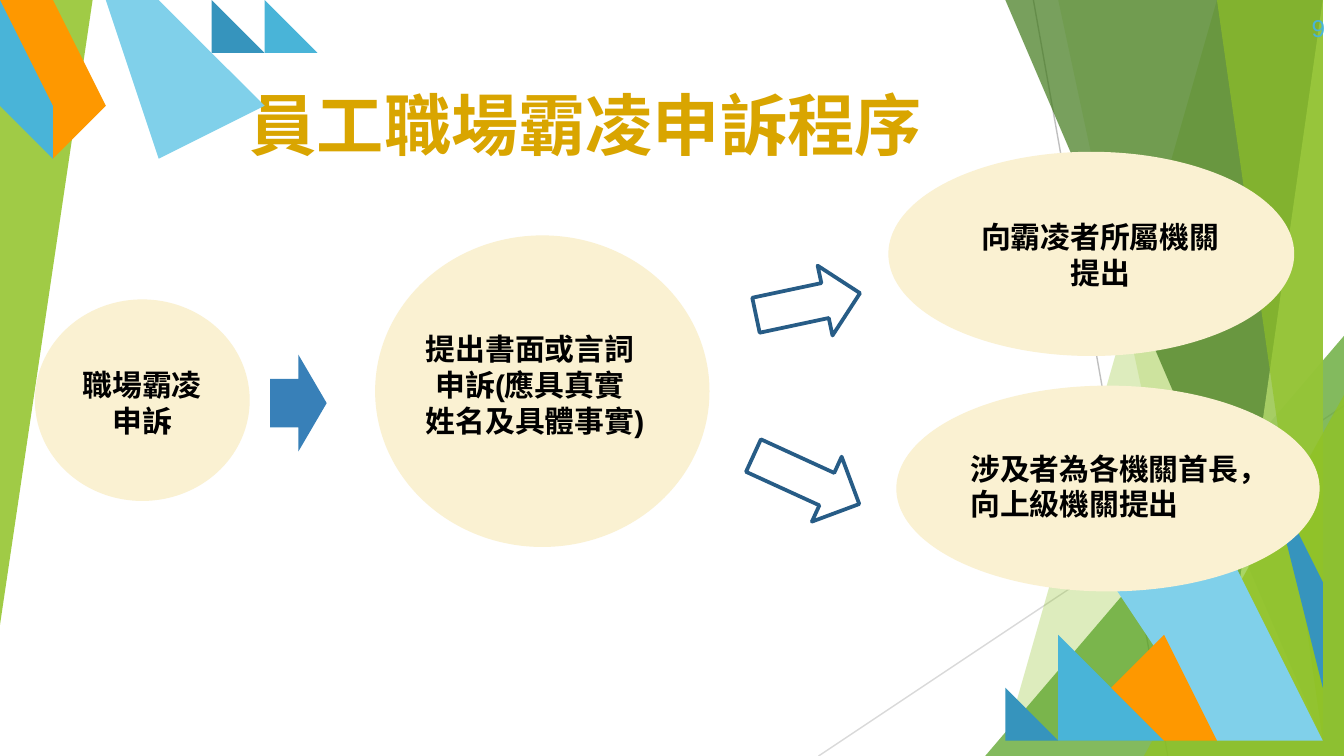
import pptx
import pptx.util
import pptx.dml.color
import pptx.enum.shapes
import pptx.enum.text
import pptx.oxml
import pptx.oxml.ns

Cm, Pt = pptx.util.Cm, pptx.util.Pt
KIND = pptx.enum.shapes.MSO_SHAPE
ALIGN = pptx.enum.text.PP_ALIGN

WIDE, HIGH = 25.4, 14.29
THEME = {
    "sky": "49B4D8", "pale": "80D0EA", "blue": "3694BD", "orange": "FE9800",
    "lime": "90C226", "leaf": "54A021", "moss": "3F7819", "mint": "C0E474",
    "cream": "FAF1D2", "gold": "D9A500", "black": "000000",
    "arrow": "3880B8", "edge": "275C86", "gray": "BFBFBF", "mist": "D9D9D9",
    "latin": "Arial", "head": "Noto Sans CJK SC", "body": "Noto Sans CJK TC",
    "title": 36, "label": 16, "number": 13,
}

# Content: all lengths in centimetres
TITLE = ("員工職場霸凌申訴程序", (2.79, 1.57, 16.56, 1.55))
NUMBER = ("9", (24.79, 0.25, 0.61, 0.56))
LINES = [(19.53, 0, 22.07, HIGH, "gray"), (WIDE, 7.67, 15.47, HIGH, "mist")]
# Facets reach the right edge: top left x, bottom left x, colour, opacity.
# Triangles: box, turn, colour, opacity.
BACK = [
    ("facet", (23.39, 19.13), "lime", 30),
    ("facet", (20.02, 22.53), "lime", 20),
    ("tri", (18.62, 6.35, 6.78, 7.94, 0), "leaf", 72),
    ("facet", (19.46, 24.59), "moss", 70),
    ("facet", (24.84, 22.71), "mint", 70),
    ("facet", (22.78, 25.1), "lime", 65),
    ("tri", (21.62, 7.47, 3.78, 6.82, 0), "lime", 80),
    ("tri", (0, 0, 1.75, 11.81, 180), "lime", 85),
]
STRIPES = [
    ("sky", [(20.45, HIGH), (21.64, HIGH), (20.45, 11.94), (19.51, 12.42)]),
    ("pale", [(23.19, HIGH), (25.35, HIGH), (23.22, 10.03), (21.49, 10.9)]),
    ("orange", [(22.1, HIGH), (23.09, HIGH), (22.1, 12.32), (21.29, 12.73)]),
    ("blue", [(19.3, HIGH), (19.89, HIGH), (19.33, 13.18), (18.87, 13.41)]),
    ("blue", [(24.49, 8.84), (23.52, 9.3), (WIDE, 13.08), (WIDE, 10.69)]),
    ("blue", [(4.14, 0), (3.51, 0), (4.14, 1.27), (4.65, 1.02)]),
    ("orange", [(1.4, 0), (0.05, 0), (1.4, 2.67), (2.49, 2.11)]),
    ("pale", [(3.33, 0), (1.78, 0), (3.33, 3.1), (4.57, 2.49)]),
    ("sky", [(5.44, 0), (4.72, 0), (5.44, 1.4), (6.02, 1.12)]),
    ("sky", [(0.53, 2.54), (1.07, 2.29), (0, 0.15), (0, 1.5)]),
]
# Steps: oval box, text box, alignment, lines with first-line indent
STEPS = [
    ((0.66, 5.66, 4.06, 3.81), (1.47, 6.93, 2.44, 1.37), ALIGN.CENTER,
     [("職場霸凌", 0), ("申訴", 0)]),
    ((7.09, 4.45, 6.32, 5.89), (8.05, 6.25, 4.17, 2.06), ALIGN.LEFT,
     [("提出書面或言詞", 0), ("申訴(應具真實", 0.18), ("姓名及具體事實)", 0)]),
    ((16.79, 2.87, 7.67, 3.86), (18.52, 4.14, 4.55, 1.37), ALIGN.CENTER,
     [("向霸凌者所屬機關", 0), ("提出", 0)]),
    ((16.94, 7.29, 8, 3.89), (18.34, 8.51, 5.84, 1.37), ALIGN.LEFT,
     [("涉及者為各機關首長，", 0), ("向上級機關提出", 0)]),
]
# Arrows: centre x, centre y, length, width, turn, fill, line
ARROWS = [
    (5.64, 7.62, 1.07, 1.83, 0, "arrow", None),
    (15.27, 5.75, 2.01, 1.35, -12, None, "edge"),
    (15.24, 9.07, 2.2, 1.35, 24.6, None, "edge"),
]


def tint(name):
    return pptx.dml.color.RGBColor.from_string(THEME[name])


def paint(shape, fill=None, line=None, clear=100):
    shape.shadow.inherit = False
    if fill:
        shape.fill.solid()
        shape.fill.fore_color.rgb = tint(fill)
        if clear < 100:
            color = shape.fill._xPr.find(".//" + pptx.oxml.ns.qn("a:srgbClr"))
            pptx.oxml.ns  # namespace helpers
            alpha = color.makeelement(pptx.oxml.ns.qn("a:alpha"), {"val": str(clear * 1000)})
            color.append(alpha)
    else:
        shape.fill.background()
    if line:
        shape.line.color.rgb = tint(line)
        shape.line.width = Pt(2)
    else:
        shape.line.fill.background()


def preset(kind, x, y, w, h, turn=0):
    shape = slide.shapes.add_shape(kind, Cm(x), Cm(y), Cm(w), Cm(h))
    shape.rotation = turn
    return shape


def outline(points):
    pen = slide.shapes.build_freeform(*points[0], scale=Cm(1))
    pen.add_line_segments(points[1:], close=True)
    return pen.convert_to_shape()


def write(shape, lines, size, color, latin, asian, bold, align):
    frame = shape.text_frame
    frame.word_wrap = True
    frame.auto_size = pptx.enum.text.MSO_AUTO_SIZE.NONE
    frame.vertical_anchor = pptx.enum.text.MSO_ANCHOR.TOP
    frame.margin_left = frame.margin_right = 0
    frame.margin_top = frame.margin_bottom = 0
    for i, (text, indent) in enumerate(lines):
        para = frame.add_paragraph() if i else frame.paragraphs[0]
        para.text = text
        para.alignment = align
        if indent:
            para._p.get_or_add_pPr().set("indent", str(Cm(indent)))
        font = para.font
        font.size, font.bold, font.name = Pt(THEME[size]), bold, THEME[latin]
        font.color.rgb = tint(color)
        props = font._rPr
        east = props.makeelement(pptx.oxml.ns.qn("a:ea"), {"typeface": THEME[asian]})
        props.find(pptx.oxml.ns.qn("a:latin")).addnext(east)


def textbox(box, *style):
    write(slide.shapes.add_textbox(*map(Cm, box)), *style)


deck = pptx.Presentation()
deck.slide_width, deck.slide_height = Cm(WIDE), Cm(HIGH)
slide = deck.slides.add_slide(deck.slide_layouts[5])

# Backdrop
for x1, y1, x2, y2, color in LINES:
    line = slide.shapes.add_connector(
        pptx.enum.shapes.MSO_CONNECTOR.STRAIGHT, Cm(x1), Cm(y1), Cm(x2), Cm(y2))
    line.line.color.rgb = tint(color)
    line.line.width = Pt(0.75)
    props = line._element.spPr
    props.append(props.makeelement(pptx.oxml.ns.qn("a:effectLst"), {}))
for kind, place, color, clear in BACK:
    if kind == "facet":
        top, low = place
        shape = outline([(top, 0), (WIDE, 0), (WIDE, HIGH), (low, HIGH)])
    else:
        shape = preset(KIND.ISOSCELES_TRIANGLE, *place)
        shape.adjustments[0] = 1
    paint(shape, color, clear=clear)
for color, points in STRIPES:
    paint(outline(points), color)

# Title and slide number
title = slide.shapes.title
title.left, title.top, title.width, title.height = map(Cm, TITLE[1])
write(title, [(TITLE[0], 0)], "title", "gold", "head", "head", True, ALIGN.CENTER)
textbox(NUMBER[1], [(NUMBER[0], 0)], "number", "sky", "latin", "latin", False, ALIGN.LEFT)

# Steps
for oval, box, align, lines in STEPS:
    paint(preset(KIND.OVAL, *oval), "cream")
    textbox(box, lines, "label", "black", "latin", "body", True, align)

# Arrows
for x, y, w, h, turn, fill, line in ARROWS:
    paint(preset(KIND.RIGHT_ARROW, x - w / 2, y - h / 2, w, h, turn), fill, line)

deck.save("out.pptx")
